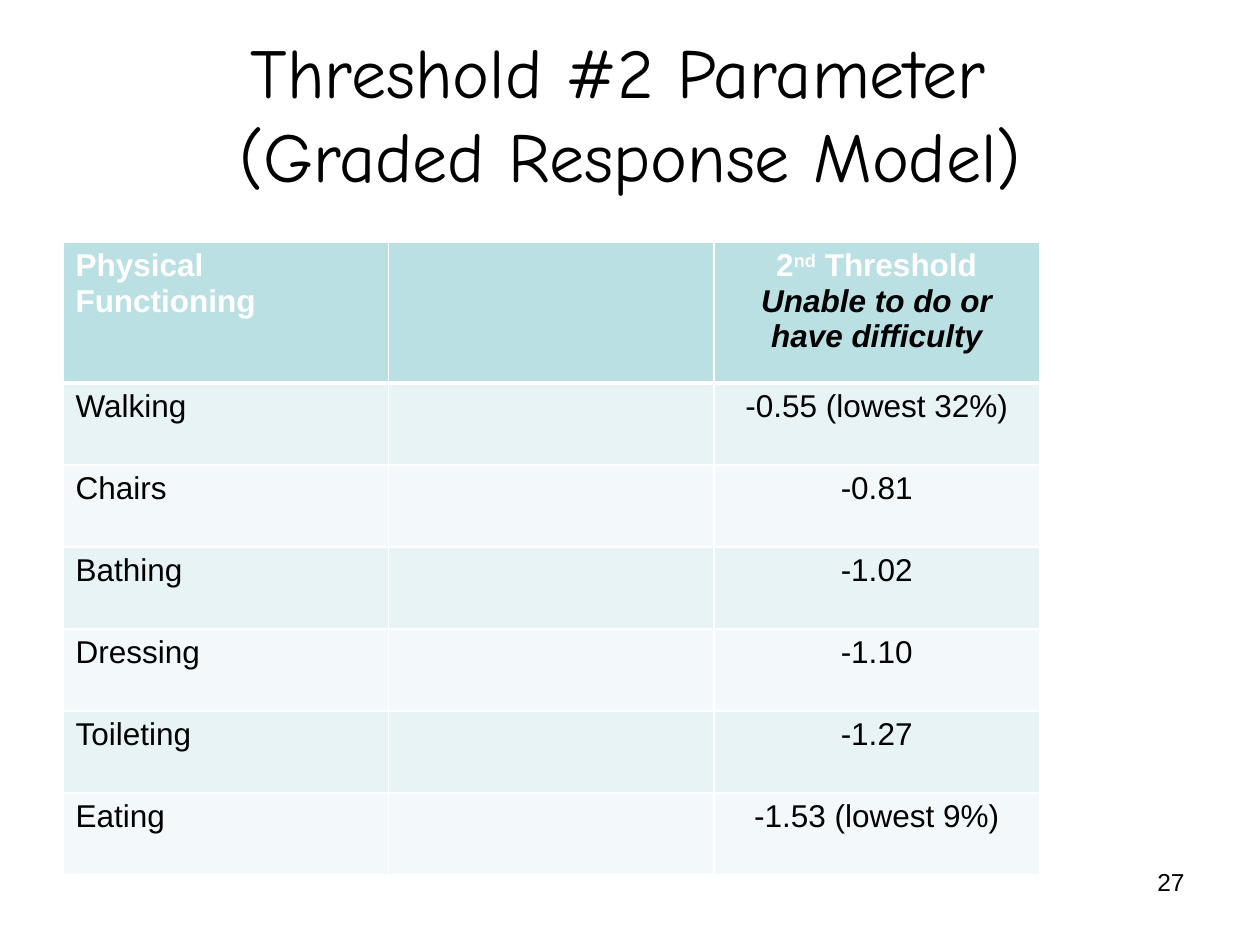
from lxml import etree
from pptx import Presentation, util as u
from pptx.dml.color import RGBColor
from pptx.enum import text as t
from pptx.oxml.ns import qn

WIDTH, HEIGHT = 10, 7.5
COLORS = {"ink": "000000", "white": "FFFFFF", "header": "BBE0E3",
          "band_dark": "E7F3F4", "band_light": "F3F9FA"}
ITEMS = [("Walking", "-0.55 (lowest 32%)"), ("Chairs", "-0.81"),
         ("Bathing", "-1.02"), ("Dressing", "-1.10"),
         ("Toileting", "-1.27"), ("Eating", "-1.53 (lowest 9%)")]


def add_text(paragraph, content, font="Arial", size=18, color="ink",
             bold=False, italic=False, align=t.PP_ALIGN.LEFT, raised=0):
    """Add text to a paragraph; each newline becomes a line break."""
    paragraph.alignment = align
    for index, line in enumerate(content.split("\n")):
        if index:
            paragraph.add_line_break()
        run = paragraph.add_run()
        run.text = line
        run.font.name, run.font.size = font, u.Pt(size)
        run.font.bold, run.font.italic = bold, italic
        run.font.color.rgb = RGBColor.from_string(COLORS[color])
        if raised:
            run.font._element.set("baseline", str(raised * 1000))


class SlideBuilder:
    def __init__(self, presentation):
        self.slide = presentation.slides.add_slide(presentation.slide_layouts[6])
        background = self.slide.background.fill
        background.solid()
        background.fore_color.rgb = RGBColor.from_string(COLORS["white"])

    def place(self, left, top, width, height):
        """Turn shares of the slide's size into lengths."""
        return (u.Inches(left * WIDTH), u.Inches(top * HEIGHT),
                u.Inches(width * WIDTH), u.Inches(height * HEIGHT))

    def text(self, box, content, anchor=t.MSO_ANCHOR.TOP, **style):
        frame = self.slide.shapes.add_textbox(*self.place(*box)).text_frame
        frame.word_wrap = True
        frame.vertical_anchor = anchor
        add_text(frame.paragraphs[0], content, **style)

    def table(self, box, rows, columns, header_share):
        place = self.place(*box)
        table = self.slide.shapes.add_table(rows, columns, *place).table
        header_height = int(place[3] * header_share)
        for index, row in enumerate(table.rows):
            row.height = header_height if index == 0 else (place[3] - header_height) // (rows - 1)
            color = "header" if index == 0 else ("band_light", "band_dark")[index % 2]
            for cell in row.cells:
                self.style_cell(cell, color, bottom=3 if index == 0 else 1,
                                top=3 if index == 1 else 1)
        return table

    def style_cell(self, cell, color, top, bottom):
        cell.fill.solid()
        cell.fill.fore_color.rgb = RGBColor.from_string(COLORS[color])
        properties = cell._tc.get_or_add_tcPr()
        sides = {"a:lnL": 1, "a:lnR": 1, "a:lnT": top, "a:lnB": bottom}
        for position, (side, points) in enumerate(sides.items()):
            line = etree.Element(qn(side), w=str(u.Pt(points)))
            fill = etree.SubElement(line, qn("a:solidFill"))
            etree.SubElement(fill, qn("a:srgbClr"), val=COLORS["white"])
            properties.insert(position, line)


def main():
    presentation = Presentation()
    presentation.slide_width, presentation.slide_height = u.Inches(WIDTH), u.Inches(HEIGHT)
    builder = SlideBuilder(presentation)
    center = t.PP_ALIGN.CENTER

    # Title
    builder.text((0, 0.036, 1, 0.167), "Threshold #2 Parameter \n(Graded Response Model)",
                 anchor=t.MSO_ANCHOR.MIDDLE, font="Comic Neue", size=40, align=center)

    # Table header
    table = builder.table((0.05, 0.256, 0.775, 0.67), len(ITEMS) + 1, 3, header_share=0.223)
    heading = {"color": "white", "bold": True}
    add_text(table.cell(0, 0).text_frame.paragraphs[0], "Physical Functioning", **heading)
    frame = table.cell(0, 2).text_frame
    for content, raised in (("2", 0), ("nd", 30), (" Threshold", 0)):
        add_text(frame.paragraphs[0], content, align=center, raised=raised, **heading)
    add_text(frame.add_paragraph(), "Unable to do or have difficulty",
             bold=True, italic=True, align=center)

    # Table body
    for row, (activity, threshold) in enumerate(ITEMS, start=1):
        add_text(table.cell(row, 0).text_frame.paragraphs[0], activity)
        add_text(table.cell(row, 2).text_frame.paragraphs[0], threshold, align=center)

    # Slide number
    builder.text((0.717, 0.911, 0.233, 0.07), "27", size=14, align=t.PP_ALIGN.RIGHT)

    presentation.save("out.pptx")


if __name__ == "__main__":
    main()
